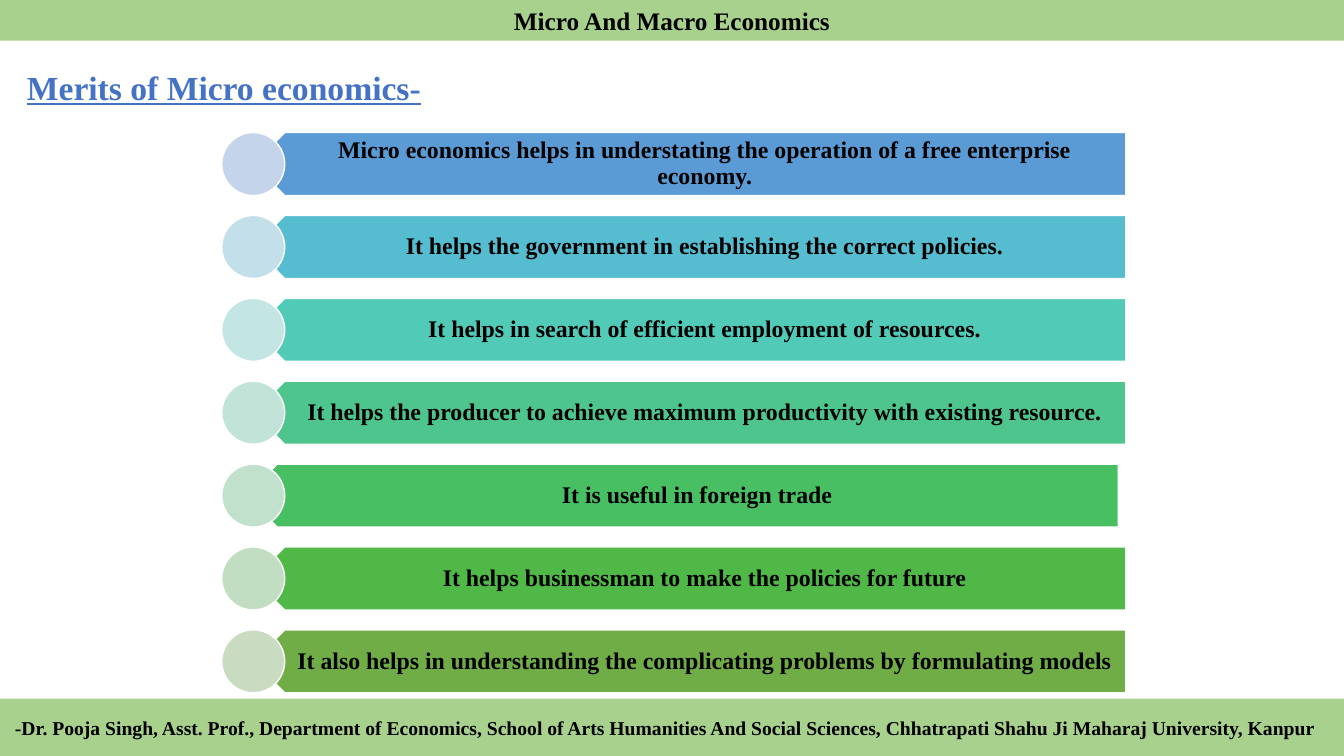
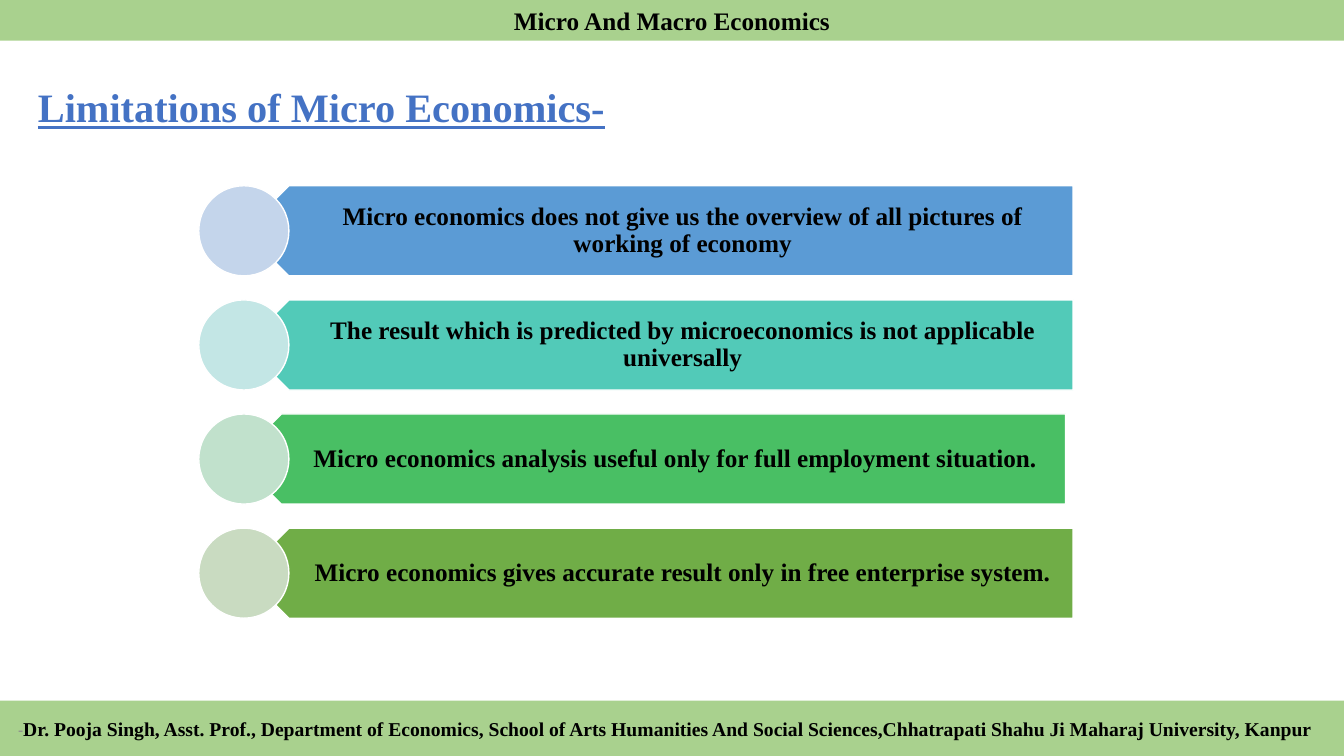
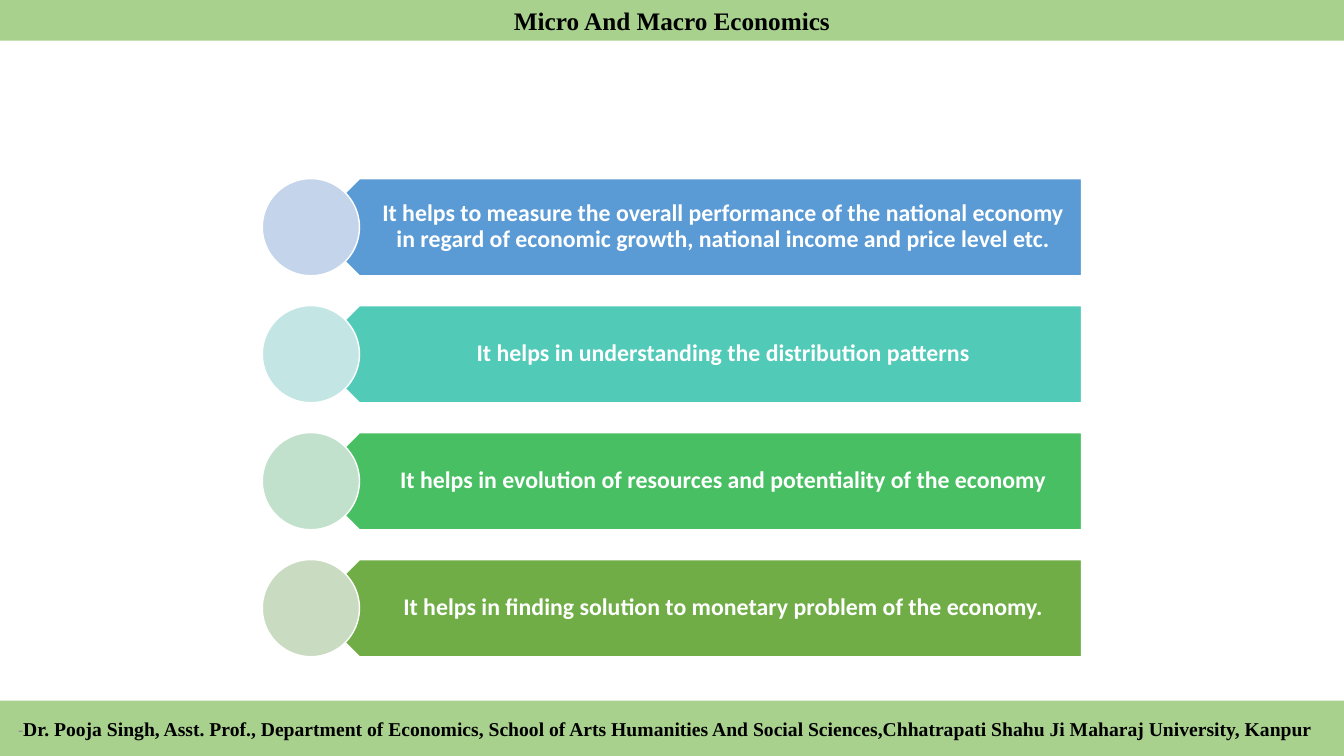
from pptx import Presentation
from pptx.dml.color import RGBColor
from pptx.enum.shapes import MSO_SHAPE
from pptx.enum.text import MSO_ANCHOR, PP_ALIGN
from pptx.util import Pt

RECT, PLATE, OVAL = MSO_SHAPE.RECTANGLE, MSO_SHAPE.PENTAGON, MSO_SHAPE.OVAL
TOP, MIDDLE = MSO_ANCHOR.TOP, MSO_ANCHOR.MIDDLE
LEFT, CENTER = PP_ALIGN.LEFT, PP_ALIGN.CENTER

BLACK = RGBColor(0, 0, 0)
WHITE = RGBColor(0xFF, 0xFF, 0xFF)
GRAY = RGBColor(0x8C, 0x8C, 0x8C)
TITLE_BLUE = RGBColor(0x44, 0x72, 0xC4)
BAND_GREEN = RGBColor(0xA9, 0xD1, 0x8E)
# (bar, circle) pairs from blue to green
PALETTE = [
    (RGBColor(0x5B, 0x9B, 0xD5), RGBColor(0xC4, 0xD5, 0xEB)),
    (RGBColor(0x56, 0xBC, 0xD0), RGBColor(0xC3, 0xDF, 0xE9)),
    (RGBColor(0x52, 0xCA, 0xB8), RGBColor(0xC3, 0xE6, 0xE5)),
    (RGBColor(0x4D, 0xC5, 0x8D), RGBColor(0xC2, 0xE4, 0xD8)),
    (RGBColor(0x49, 0xBF, 0x64), RGBColor(0xC1, 0xE1, 0xCC)),
    (RGBColor(0x50, 0xB8, 0x46), RGBColor(0xC1, 0xDE, 0xC2)),
    (RGBColor(0x70, 0xAD, 0x47), RGBColor(0xC9, 0xDB, 0xC1)),
]
SERIF, SANS = "Times New Roman", "Calibri"
SLIDE_W, SLIDE_H = 960, 540

HEADER = "Micro And Macro Economics"
AUTHOR = ("Dr. Pooja Singh, Asst. Prof., Department of Economics, "
          "School of Arts Humanities And Social Sciences,")
UNIVERSITY = "Chhatrapati Shahu Ji Maharaj University, Kanpur"
FOOTER_BOLD = (14, SERIF, BLACK, True)
FOOTER_SPACED = [(f"-{AUTHOR} {UNIVERSITY}", *FOOTER_BOLD)]
FOOTER_GRAY_DASH = [("-", 12, SANS, GRAY, False),
                    (AUTHOR + UNIVERSITY, *FOOTER_BOLD)]

# list: left and top of the first circle, its size, row pitch, bar width;
# shifted: row whose bar sits further left
SLIDES = [
    dict(title=("Merits of Micro economics-", 24, (12.2, 44.6, 399, 39)),
         items=["Micro economics helps in understating the operation of a free enterprise economy.",
                "It helps the government in establishing the correct policies.",
                "It helps in search of efficient employment of resources.",
                "It helps the producer to achieve maximum productivity with existing resource.",
                "It is useful in foreign trade",
                "It helps businessman to make the policies for future",
                "It also helps in understanding the complicating problems by formulating models"],
         list=(158.4, 94.7, 45, 59.2, 623.3), shifted=4,
         font=(17, SERIF, BLACK), footer=(FOOTER_SPACED, 41)),
    dict(title=("Limitations of Micro Economics-", 28.8, (20, 56, 442, 45)),
         items=["Micro economics does not give us the overview of all pictures of working of economy",
                "The result which is predicted by microeconomics is not applicable universally",
                "Micro economics analysis useful only for full employment situation.",
                "Micro economics gives accurate result only in free enterprise system."],
         list=(142, 132.7, 64.4, 81.5, 592.3), shifted=2,
         font=(18, SERIF, BLACK), footer=(FOOTER_GRAY_DASH, 39.6)),
    dict(title=None,
         items=["It helps to measure the overall performance of the national economy "
                "in regard of economic growth, national income and price level etc.",
                "It helps in understanding the distribution patterns",
                "It helps in evolution of resources and potentiality of the economy",
                "It helps in finding solution to monetary problem of the economy."],
         list=(187.4, 127.6, 69.4, 90.7, 550.4), shifted=None,
         font=(17, SANS, WHITE), footer=(FOOTER_GRAY_DASH, 39.6)),
]
BAR_SHIFT = 5.4


def add_box(s, kind, box, fill, line=None):
    sp = s.shapes.add_shape(kind, *map(Pt, box))
    sp.shadow.inherit = False
    sp.fill.solid()
    sp.fill.fore_color.rgb = fill
    if line is None:
        sp.line.fill.background()
    else:
        sp.line.color.rgb = line
        sp.line.width = Pt(1)
    return sp


def write(sp, runs, align=CENTER, anchor=MIDDLE, insets=(7.2, 3.6, 7.2, 3.6),
          spacing=None, underline=None):
    """Fill one paragraph with (text, size, font, colour, bold) runs."""
    tf = sp.text_frame
    tf.word_wrap = True
    tf.vertical_anchor = anchor
    tf.margin_left, tf.margin_top, tf.margin_right, tf.margin_bottom = map(Pt, insets)
    p = tf.paragraphs[0]
    p.alignment = align
    p.line_spacing = spacing
    for text, size, font, color, bold in runs:
        r = p.add_run()
        r.text = text
        r.font.size = Pt(size)
        r.font.name = font
        r.font.color.rgb = color
        r.font.bold = bold
        r.font.underline = underline


def add_title(s, text, size, box):
    write(s.shapes.add_textbox(*map(Pt, box)), [(text, size, SERIF, TITLE_BLUE, True)],
          align=LEFT, spacing=0.9, underline=True)


def add_list(s, items, geometry, shifted, font):
    left, top, size, pitch, bar_w = geometry
    insets = (0.44 * size, 5, 0.55 * font[0], 5)
    color_step = (len(PALETTE) - 1) // (len(items) - 1)
    for i, text in enumerate(items):
        bar_color, circle_color = PALETTE[i * color_step]
        y = top + i * pitch
        x = left + size / 2 - (BAR_SHIFT if i == shifted else 0)
        bar = add_box(s, PLATE, (x, y, bar_w, size), bar_color, WHITE)
        bar.rotation = 180
        label = s.shapes.add_textbox(*map(Pt, (x + size / 4, y, bar_w - size / 4, size)))
        write(label, [(text, *font, True)], insets=insets, spacing=0.9)
        add_box(s, OVAL, (left, y, size, size), circle_color, WHITE)


def add_bands(s, footer_runs, footer_h):
    footer = add_box(s, RECT, (0, SLIDE_H - footer_h, SLIDE_W, footer_h), BAND_GREEN)
    write(footer, footer_runs, insets=(7.2, 3.6, 16, 3.6))
    header = add_box(s, RECT, (0, 0, SLIDE_W, 29), BAND_GREEN)
    write(header, [(HEADER, 18, SERIF, BLACK, True)], anchor=TOP)


def main():
    prs = Presentation()
    prs.slide_width, prs.slide_height = Pt(SLIDE_W), Pt(SLIDE_H)
    for data in SLIDES:
        s = prs.slides.add_slide(prs.slide_layouts[6])
        if data["title"]:
            add_title(s, *data["title"])
        add_list(s, data["items"], data["list"], data["shifted"], data["font"])
        add_bands(s, *data["footer"])
    prs.save("out.pptx")


if __name__ == "__main__":
    main()
